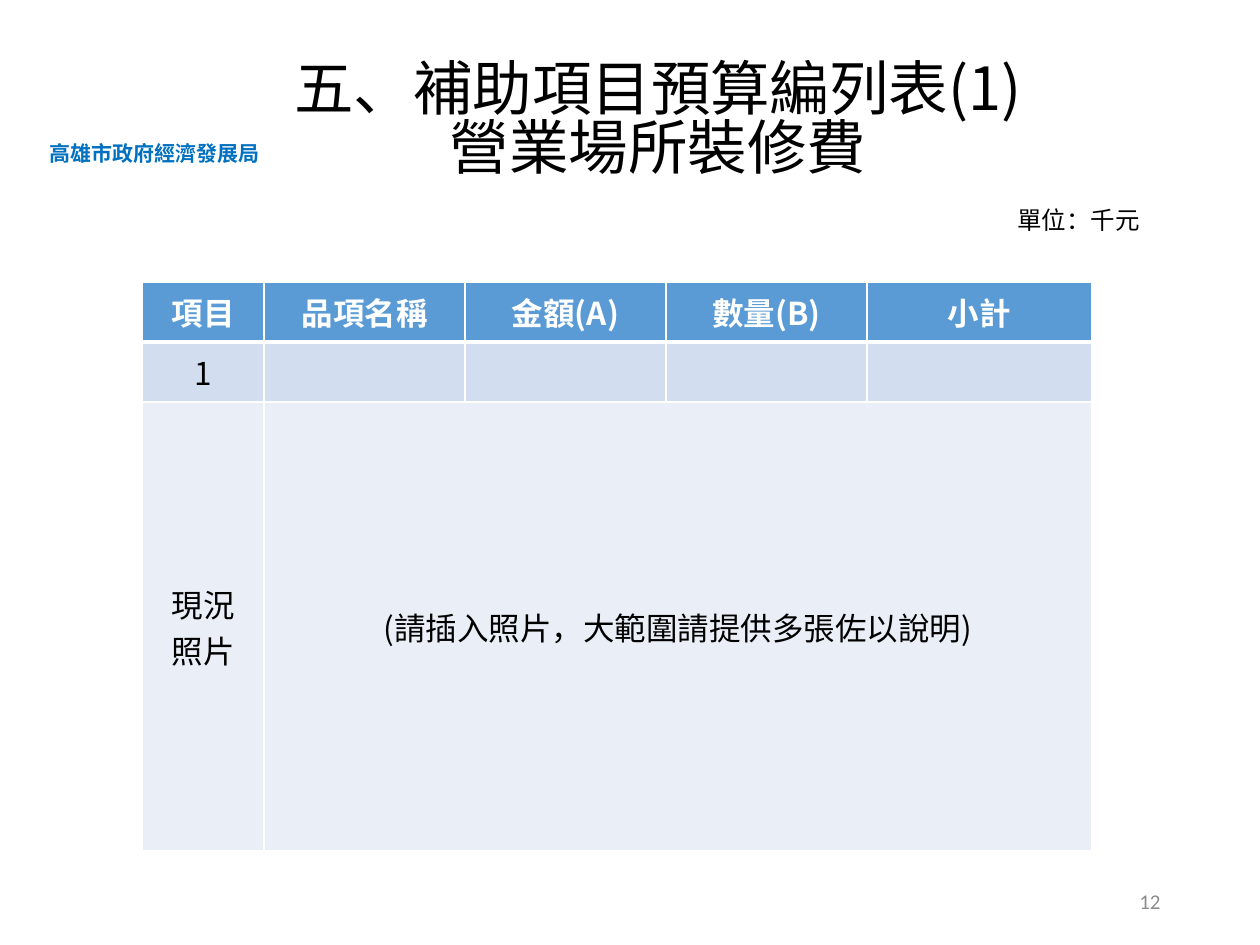
from lxml import etree
from pptx import Presentation
from pptx.dml.color import RGBColor
from pptx.enum.text import MSO_ANCHOR as Anchor, MSO_AUTO_SIZE as AutoSize, PP_ALIGN as Align
from pptx.oxml.ns import qn
from pptx.util import Pt

EMU_PER_PX = 914400 / 126
CJK_FONT = "Noto Sans CJK SC"
BLACK = RGBColor(0x00, 0x00, 0x00)
WHITE = RGBColor(0xFF, 0xFF, 0xFF)
GRAY = RGBColor(0x8C, 0x8C, 0x8C)
AGENCY_BLUE = RGBColor(0x00, 0x70, 0xC0)
HEADER_BLUE = RGBColor(0x5B, 0x9B, 0xD5)
ITEM_BLUE = RGBColor(0xD2, 0xDE, 0xEF)
PHOTO_BLUE = RGBColor(0xEA, 0xEF, 0xF7)

COLUMN_WIDTHS = [122, 201, 201, 201, 225]
ROW_HEIGHTS = [60, 60, 449]
ROW_FILLS = [HEADER_BLUE, ITEM_BLUE, PHOTO_BLUE]
ROWS = [
    ["項目", "品項名稱", "金額(A)", "數量(B)", "小計"],
    ["1", "", "", "", ""],
    ["現況\n照片", "(請插入照片，大範圍請提供多張佐以說明)", "", "", ""],
]


def px(length):
    return round(length * EMU_PER_PX)


def write_text(text_frame, text, size, color, bold=False, align=Align.LEFT, font=CJK_FONT):
    text_frame.text = text
    for paragraph in text_frame.paragraphs:
        paragraph.alignment = align
        for run in paragraph.runs:
            run.font.name = font
            run.font.size = Pt(size)
            run.font.bold = bold
            run.font.color.rgb = color
            latin = run.font._element.find(qn("a:latin"))
            east_asian = etree.Element(qn("a:ea"), typeface=font)
            latin.addnext(east_asian)


def add_text(slide, box, text, size, color, anchor=Anchor.TOP, wrap=True, grow=False, **style):
    shape = slide.shapes.add_textbox(*map(px, box))
    text_frame = shape.text_frame
    text_frame.word_wrap = wrap
    text_frame.vertical_anchor = anchor
    text_frame.auto_size = AutoSize.SHAPE_TO_FIT_TEXT if grow else AutoSize.NONE
    write_text(text_frame, text, size, color, **style)
    return text_frame


def set_borders(cell, bottom_width):
    properties = cell._tc.get_or_add_tcPr()
    widths = {"a:lnL": 1, "a:lnR": 1, "a:lnT": 1, "a:lnB": bottom_width}
    for position, (tag, width) in enumerate(widths.items()):
        line = etree.Element(qn(tag), w=str(Pt(width)))
        fill = etree.SubElement(line, qn("a:solidFill"))
        etree.SubElement(fill, qn("a:srgbClr"), val=str(WHITE))
        properties.insert(position, line)


def add_budget_table(slide):
    frame = slide.shapes.add_table(
        len(ROWS), len(COLUMN_WIDTHS), px(142), px(282),
        px(sum(COLUMN_WIDTHS)), px(sum(ROW_HEIGHTS)))
    table = frame.table
    for column, width in zip(table.columns, COLUMN_WIDTHS):
        column.width = px(width)
    for row, height in zip(table.rows, ROW_HEIGHTS):
        row.height = px(height)
    table.cell(2, 1).merge(table.cell(2, 4))
    for row_index, labels in enumerate(ROWS):
        header = row_index == 0
        for column_index, label in enumerate(labels):
            cell = table.cell(row_index, column_index)
            cell.fill.solid()
            cell.fill.fore_color.rgb = ROW_FILLS[row_index]
            cell.vertical_anchor = Anchor.MIDDLE
            set_borders(cell, 3 if header else 1)
            write_text(cell.text_frame, label, 18, WHITE if header else BLACK,
                       bold=header, align=Align.CENTER)


def main():
    presentation = Presentation()
    presentation.slide_width = px(1260)
    presentation.slide_height = px(945)
    slide = presentation.slides.add_slide(presentation.slide_layouts[6])
    add_text(slide, (37, 134, 237, 38), "高雄市政府經濟發展局", 12, AGENCY_BLUE,
             wrap=False, grow=True, bold=True)
    add_budget_table(slide)
    title = add_text(slide, (91, 59, 1134, 127), "五、補助項目預算編列表(1)\n營業場所裝修費",
                     34, BLACK, anchor=Anchor.MIDDLE, align=Align.CENTER)
    for paragraph in title.paragraphs:
        paragraph.line_spacing = 0.82
    add_text(slide, (1005, 199, 630, 43), "單位：千元", 14, BLACK, grow=True)
    add_text(slide, (890, 876, 283, 50), "12", 12, GRAY, anchor=Anchor.MIDDLE,
             align=Align.RIGHT, font="Calibri")
    presentation.save("out.pptx")


if __name__ == "__main__":
    main()
